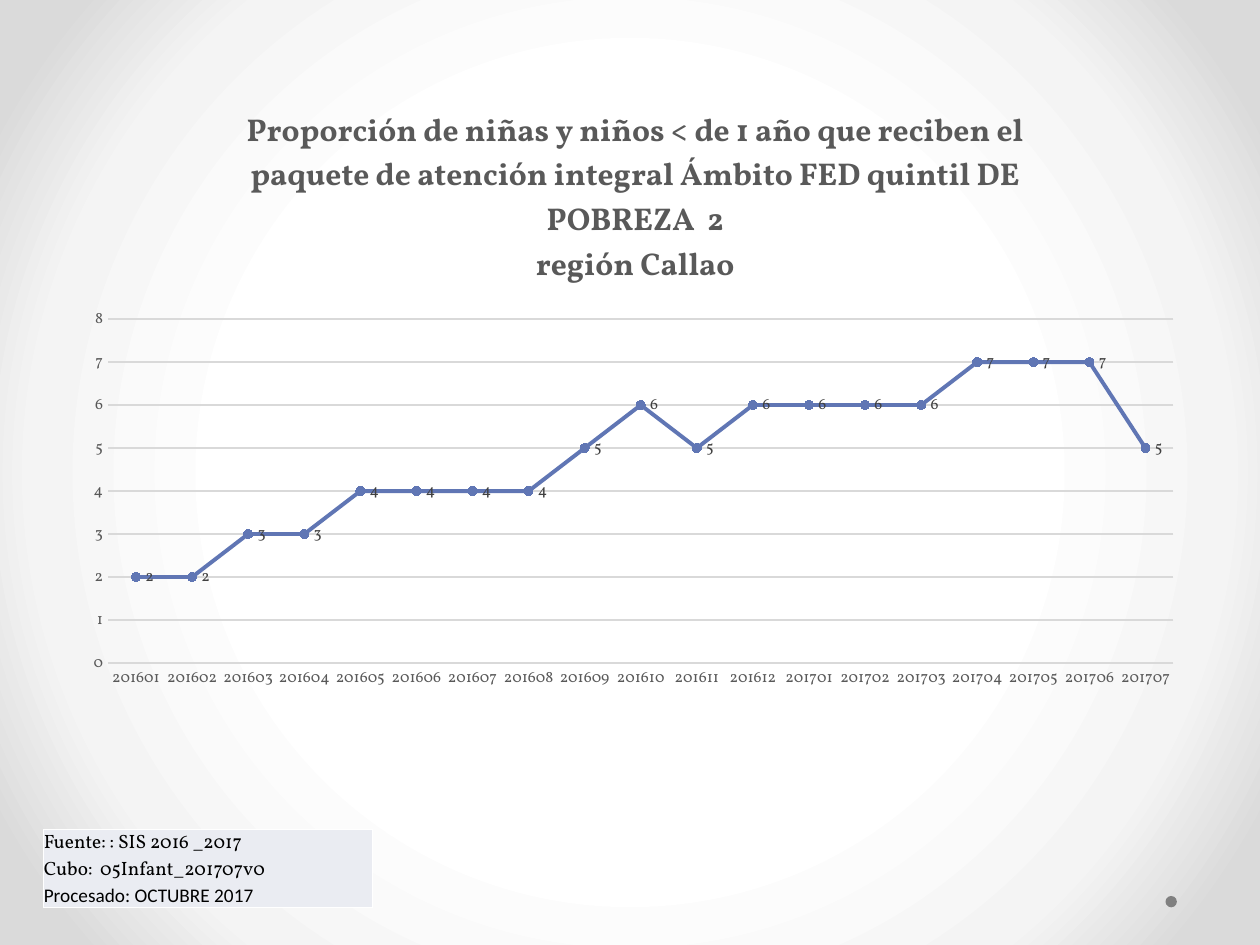
"""Builds a slide with a monthly line chart and a source note."""
from lxml import etree
from pptx import Presentation
from pptx.chart.data import CategoryChartData
from pptx.dml.color import RGBColor
from pptx.enum.chart import XL_CHART_TYPE, XL_LABEL_POSITION, XL_MARKER_STYLE, XL_TICK_MARK
from pptx.enum.shapes import MSO_SHAPE
from pptx.enum.text import MSO_ANCHOR
from pptx.oxml import parse_xml
from pptx.oxml.ns import nsdecls, qn
from pptx.util import Pt

LINE = XL_CHART_TYPE.LINE_MARKERS
RIGHT = XL_LABEL_POSITION.RIGHT
DOT = XL_MARKER_STYLE.CIRCLE
NO_TICK = XL_TICK_MARK.NONE
OVAL = MSO_SHAPE.OVAL
BOTTOM = MSO_ANCHOR.BOTTOM

FONT = "Vollkorn"
COLORS = {"white": "FFFFFF", "pale": "F4F4F4", "edge": "DADADA", "grid": "D9D9D9",
          "text": "595959", "label": "404040", "line": "6076B4", "cell": "EAECF2",
          "dot": "808080", "black": "000000"}
MONTHS = [f"2016{m:02}" for m in range(1, 13)] + [f"2017{m:02}" for m in range(1, 8)]
VALUES = [2, 2, 3, 3, 4, 4, 4, 4, 5, 6, 5, 6, 6, 6, 6, 7, 7, 7, 5]
TITLE = ["Proporción de niñas y niños < de 1 año que reciben el paquete de atención "
         "integral Ámbito FED quintil DE POBREZA  2", "región Callao"]
NOTES = [("Fuente: : SIS 2016 _2017", FONT), ("Cubo:  05Infant_201707v0", FONT),
         ("Procesado: OCTUBRE 2017", "Calibri")]


def rgb(name):
    return RGBColor.from_string(COLORS[name])


def style(font, size, color, face=FONT, bold=False):
    font.size, font.name, font.bold = Pt(size), face, bold
    font.color.rgb = rgb(color)


def add_text(frame, text, first=False, **form):
    para = frame.paragraphs[0] if first else frame.add_paragraph()
    run = para.add_run()
    run.text = text
    style(run.font, **form)


def paint(fill, color):
    fill.solid()
    fill.fore_color.rgb = rgb(color)


def draw(line, color, width):
    line.color.rgb = rgb(color)
    line.width = Pt(width)


def set_back(slide):
    stops = "".join(f'<a:gs pos="{pos}000"><a:srgbClr val="{COLORS[name]}"/></a:gs>'
                    for pos, name in ((50, "white"), (76, "pale"), (92, "edge")))
    slide.element.cSld.insert(0, parse_xml(
        f'<p:bg {nsdecls("p", "a")}><p:bgPr><a:gradFill rotWithShape="1">'
        f'<a:gsLst>{stops}</a:gsLst><a:path path="circle">'
        '<a:fillToRect l="50000" t="50000" r="50000" b="50000"/></a:path>'
        '</a:gradFill><a:effectLst/></p:bgPr></p:bg>'))


def place_plot(chart, **box):
    plot = chart.element.find(".//" + qn("c:plotArea"))
    old = plot.find(qn("c:layout"))
    if old is not None:
        plot.remove(old)
    layout = etree.Element(qn("c:layout"))
    manual = etree.SubElement(layout, qn("c:manualLayout"))
    parts = {"layoutTarget": "inner", "xMode": "edge", "yMode": "edge", **box}
    for tag, value in parts.items():
        etree.SubElement(manual, qn("c:" + tag), val=str(value))
    plot.insert(0, layout)


def add_graph(slide):
    data = CategoryChartData(number_format="0")
    data.categories = MONTHS
    data.add_series("Series 1", VALUES)
    chart = slide.shapes.add_chart(LINE, Pt(42.5), Pt(49), Pt(641), Pt(351), data).chart
    style(chart.font, 10, "black")
    chart.has_legend = False
    frame = chart.chart_title.text_frame
    for i, text in enumerate(TITLE):
        add_text(frame, text, first=i == 0, size=18, color="text", bold=True)
    place_plot(chart, x=0.03, y=0.38, w=0.95, h=0.56)

    for axis in (chart.category_axis, chart.value_axis):
        style(axis.tick_labels.font, 9, "text")
        axis.major_tick_mark = axis.minor_tick_mark = NO_TICK
    draw(chart.category_axis.format.line, "grid", 0.75)
    axis = chart.value_axis
    axis.minimum_scale, axis.maximum_scale, axis.major_unit = 0, 8, 1
    axis.format.line.fill.background()
    draw(axis.major_gridlines.format.line, "grid", 0.75)

    plot = chart.plots[0]
    plot.vary_by_categories = False
    series = plot.series[0]
    series.smooth = False
    draw(series.format.line, "line", 2.25)
    series.marker.style, series.marker.size = DOT, 5
    paint(series.marker.format.fill, "line")
    draw(series.marker.format.line, "line", 0.75)
    labels = series.data_labels
    labels.show_value, labels.position = True, RIGHT
    style(labels.font, 9, "label")


def add_note(slide):
    table = slide.shapes.add_table(1, 1, Pt(25), Pt(474), Pt(188), Pt(22)).table
    cell = table.cell(0, 0)
    cell.margin_left = cell.margin_right = cell.margin_top = cell.margin_bottom = 0
    cell.vertical_anchor = BOTTOM
    for i, (text, face) in enumerate(NOTES):
        add_text(cell.text_frame, text, first=i == 0, size=11, color="black", face=face)
    props = cell._tc.get_or_add_tcPr()
    for side in ("lnL", "lnR", "lnT", "lnB"):
        props.append(parse_xml(
            f'<a:{side} {nsdecls("a")} w="{Pt(1)}"><a:solidFill>'
            f'<a:srgbClr val="{COLORS["white"]}"/></a:solidFill></a:{side}>'))
    paint(cell.fill, "cell")


def add_dot(slide):
    dot = slide.shapes.add_shape(OVAL, Pt(666), Pt(512), Pt(6.5), Pt(6.5))
    dot.shadow.inherit = False
    paint(dot.fill, "dot")
    dot.line.fill.background()


def main():
    deck = Presentation()
    deck.slide_width, deck.slide_height = Pt(720), Pt(540)
    slide = deck.slides.add_slide(deck.slide_layouts[6])
    set_back(slide)
    add_dot(slide)
    add_note(slide)
    add_graph(slide)
    deck.save("out.pptx")


if __name__ == "__main__":
    main()
